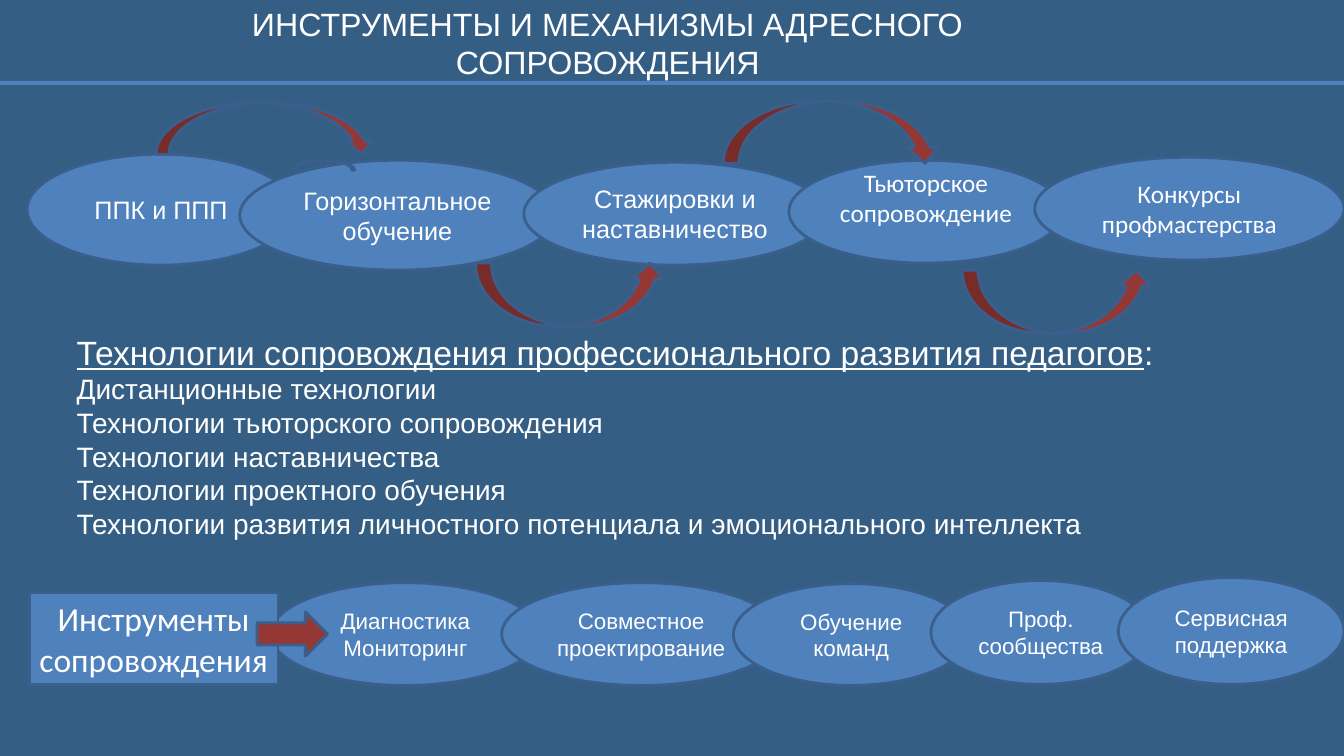
from pptx import Presentation
from pptx.dml.color import RGBColor
from pptx.enum.shapes import MSO_CONNECTOR, MSO_SHAPE
from pptx.enum.text import MSO_ANCHOR, MSO_AUTO_SIZE, PP_ALIGN
from pptx.oxml.ns import qn
from pptx.util import Inches, Pt
from lxml.etree import SubElement

COLORS = {
    "background": "345E84",
    "blue": "4F81BD",
    "outline": "3A5F8C",
    "red": "953735",
    "text": "FFFFFF",
}
SLIDE_WIDTH, SLIDE_HEIGHT = Inches(13.34), Inches(7.5)
COLUMN, ROW = SLIDE_WIDTH / 100, SLIDE_HEIGHT / 100

# Regions in grid units: left column, top row, columns, rows
TITLE_BOX = (9.82, -0.13, 70.84, 12.13)
MECHANISMS_BOX = (0, 13, 100, 32)
TECHNOLOGIES_BOX = (4.95, 43.2, 85.83, 29.5)
TOOLS_BOX = (0, 76, 100, 15)
RULE_ROW = 10.93

# Cells are measured from the corner of their region
MECHANISMS = [
    ("ППК и ППП", (2.02, 7.4, 19.94, 14.67), "Arial"),
    ("Горизонтальное обучение", (17.84, 8.2, 23.46, 14.53), "Arial"),
    ("Стажировки и наставничество", (38.98, 8.47, 22.49, 13.6), "Arial"),
    ("Тьюторское сопровождение", (58.7, 8.2, 20.39, 13.6), "Calibri"),
    ("Конкурсы профмастерства", (76.99, 7.8, 23.01, 13.6), "Calibri"),
]
MECHANISM_ARROWS = [
    (MSO_SHAPE.CURVED_DOWN_ARROW, (11.62, 0.6, 16.27, 6.8)),
    (MSO_SHAPE.CURVED_DOWN_ARROW, (53.82, 0.33, 16.19, 8.27)),
    (MSO_SHAPE.CURVED_UP_ARROW, (35.38, 21.8, 14.17, 8.4)),
    (MSO_SHAPE.CURVED_UP_ARROW, (71.59, 22.73, 14.17, 8.4)),
]
TOOLS = [
    ("Диагностика\nМониторинг", (20.16, 1.07, 20.01, 13.6)),
    ("Совместное проектирование", (37.33, 1.07, 20.76, 13.6)),
    ("Обучение команд", (54.57, 1.2, 17.54, 13.47)),
    ("Проф. сообщества", (69.27, 0.8, 16.34, 13.73)),
    ("Сервисная поддержка", (83.21, 0.4, 16.79, 14.13)),
]
TECHNOLOGIES = [
    "Технологии сопровождения профессионального развития педагогов",
    "Дистанционные технологии",
    "Технологии тьюторского сопровождения",
    "Технологии наставничества",
    "Технологии проектного обучения",
    "Технологии развития личностного потенциала и эмоционального интеллекта",
]


def color(name):
    return RGBColor.from_string(COLORS[name])


def to_lengths(cell, box=(0, 0)):
    left, top, width, height = cell
    return [round(length) for length in (
        (box[0] + left) * COLUMN, (box[1] + top) * ROW, width * COLUMN, height * ROW)]


def format_paragraph(paragraph, size, font="Arial", align=PP_ALIGN.CENTER):
    paragraph.alignment = align
    paragraph.space_before = Pt(0)
    for run in paragraph.runs:
        run.font.size = Pt(size)
        run.font.name = font
        run.font.color.rgb = color("text")


def add_figure(slide, kind, box, cell, fill="blue", text="", size=18, font="Arial"):
    shape = slide.shapes.add_shape(kind, *to_lengths(cell, box))
    shape.shadow.inherit = False
    shape.fill.solid()
    shape.fill.fore_color.rgb = color(fill)
    shape.line.color.rgb = color("outline")
    shape.line.width = Pt(2)
    if text:
        shape.text_frame.text = text
        shape.text_frame.vertical_anchor = MSO_ANCHOR.MIDDLE
        for paragraph in shape.text_frame.paragraphs:
            format_paragraph(paragraph, size, font)
    return shape


def prepare_placeholder(placeholder, box):
    """Move a placeholder to its box and fix its text to the top."""
    placeholder.left, placeholder.top, placeholder.width, placeholder.height = to_lengths(box)
    frame = placeholder.text_frame
    frame.word_wrap = True
    frame.auto_size = MSO_AUTO_SIZE.NONE
    frame.vertical_anchor = MSO_ANCHOR.TOP
    return frame


def fill_title(slide, box):
    frame = prepare_placeholder(slide.shapes.title, box)
    frame.text = "ИНСТРУМЕНТЫ И МЕХАНИЗМЫ АДРЕСНОГО СОПРОВОЖДЕНИЯ"
    format_paragraph(frame.paragraphs[0], 23)


def add_rule(slide, row):
    height = round(row * ROW)
    rule = slide.shapes.add_connector(MSO_CONNECTOR.STRAIGHT, 0, height, SLIDE_WIDTH, height)
    rule.line.color.rgb = color("blue")
    rule.line.width = Pt(3)
    SubElement(rule.element.spPr, qn("a:effectLst"))


def fill_technologies(slide, box):
    frame = prepare_placeholder(slide.placeholders[1], box)
    frame.text = "\n".join(TECHNOLOGIES)
    heading = frame.paragraphs[0]
    heading.runs[0].font.underline = True
    heading.add_run().text = ":"
    for paragraph in frame.paragraphs:
        format_paragraph(paragraph, 24 if paragraph.runs[0].font.underline else 20,
                         align=PP_ALIGN.LEFT)
        properties = paragraph._p.get_or_add_pPr()
        properties.set("marL", "0")
        properties.set("indent", "0")
        SubElement(properties, qn("a:buNone"))


def add_mechanisms(slide, box):
    for text, cell, font in MECHANISMS:
        ellipse = add_figure(slide, MSO_SHAPE.OVAL, box, cell, text=text, font=font)
        if text.startswith("Тьюторское"):
            ellipse.text_frame.margin_top = 0
            ellipse.text_frame.margin_bottom = Inches(0.28)
    small_arrow = add_figure(slide, MSO_SHAPE.CURVED_DOWN_ARROW, box, (21.74, 8.2, 4.65, 1.33))
    small_arrow.element.spPr.xfrm.set("flipH", "1")
    for kind, cell in MECHANISM_ARROWS:
        add_figure(slide, kind, box, cell, "red")


def add_tools(slide, box):
    for text, cell in TOOLS:
        add_figure(slide, MSO_SHAPE.OVAL, box, cell, text=text, size=16)
    add_figure(slide, MSO_SHAPE.RECTANGLE, box, (2.17, 2.4, 18.52, 12.13),
               text="Инструменты сопровождения", size=24, font="Calibri")
    add_figure(slide, MSO_SHAPE.RIGHT_ARROW, box, (19.12, 4.93, 5.25, 5.87), "red")


def main():
    presentation = Presentation()
    presentation.slide_width, presentation.slide_height = SLIDE_WIDTH, SLIDE_HEIGHT
    slide = presentation.slides.add_slide(presentation.slide_layouts[1])
    slide.background.fill.solid()
    slide.background.fill.fore_color.rgb = color("background")
    add_rule(slide, RULE_ROW)
    fill_title(slide, TITLE_BOX)
    add_mechanisms(slide, MECHANISMS_BOX)
    fill_technologies(slide, TECHNOLOGIES_BOX)
    add_tools(slide, TOOLS_BOX)
    presentation.save("out.pptx")


if __name__ == "__main__":
    main()
